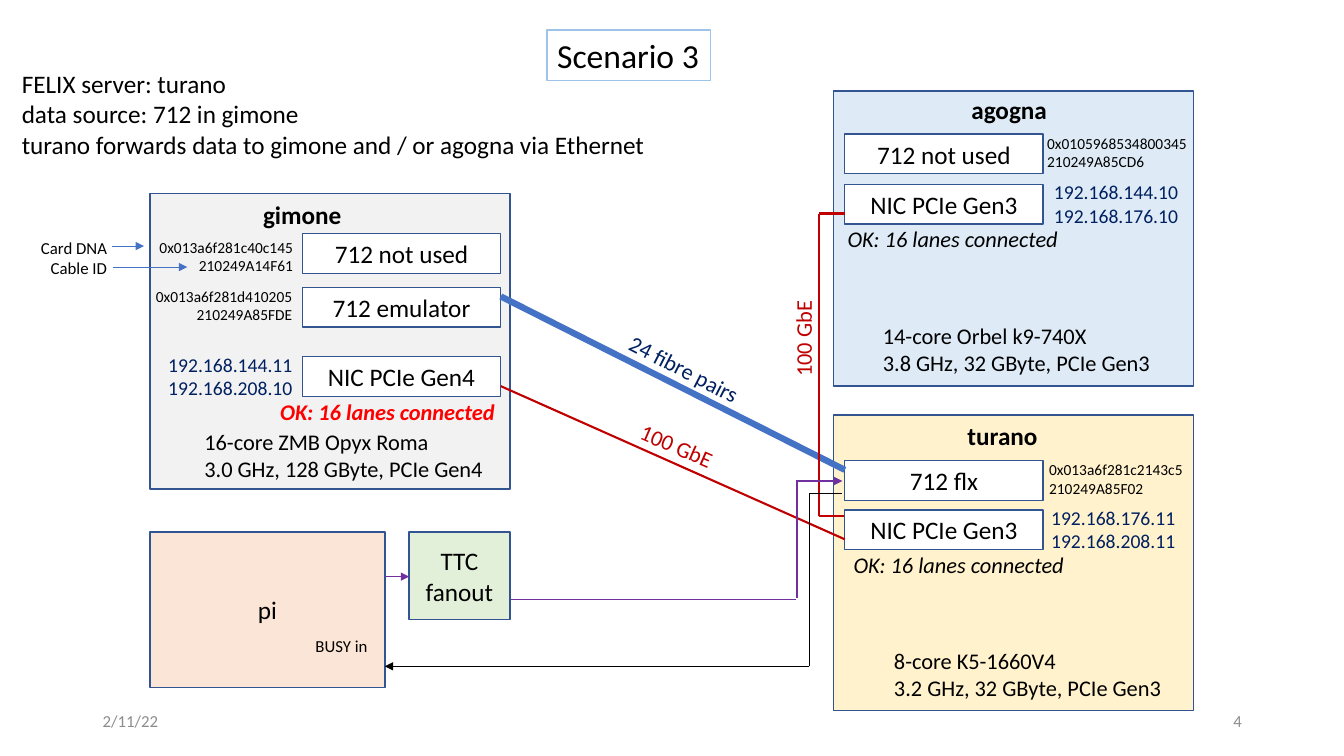
import pptx
import pptx.util
import pptx.dml.color
import pptx.enum.shapes
import pptx.enum.text
import pptx.oxml
import pptx.oxml.ns

Cm = pptx.util.Cm
Pt = pptx.util.Pt
ALIGN = pptx.enum.text.PP_ALIGN
ANCHOR = pptx.enum.text.MSO_ANCHOR
FIT = pptx.enum.text.MSO_AUTO_SIZE

THEME = {
    "font": "Calibri",
    "colours": {
        "black": "000000", "white": "FFFFFF", "outline": "325491",
        "grey": "F2F2F2", "sky": "DEEBF7", "sand": "FFF2CC",
        "peach": "FBE5D6", "mint": "E2F0D9", "title line": "9DC3E6",
        "blue": "4472C4", "red": "C00000", "purple": "7030A0",
        "navy": "002060", "alert": "FF0000", "footer": "8C8C8C",
    },
    "text": {
        "title": {"size": 24},
        "body": {"size": 18},
        "name": {"size": 18, "bold": True},
        "hardware": {"size": 16},
        "lanes": {"size": 16, "italic": True},
        "alert": {"size": 16, "colour": "alert", "bold": True, "italic": True},
        "fibre": {"size": 16, "colour": "navy"},
        "ethernet": {"size": 16, "colour": "red"},
        "address": {"size": 14, "colour": "navy"},
        "identity": {"size": 11},
        "identity right": {"size": 11, "align": ALIGN.RIGHT},
        "small": {"size": 12},
        "key": {"size": 12, "align": ALIGN.RIGHT, "wrap": True},
        "intro": {"size": 18, "wrap": True},
        "date": {"size": 12, "colour": "footer", "wrap": True, "anchor": ANCHOR.MIDDLE},
        "page": {"size": 12, "colour": "footer", "wrap": True, "anchor": ANCHOR.MIDDLE,
                 "align": ALIGN.RIGHT},
        "box": {"size": 18, "wrap": True, "anchor": ANCHOR.MIDDLE, "align": ALIGN.CENTER},
    },
}

PANEL_SIZE = (9.07, 7.44)
CARD_SIZE = (5.0, 1.0)

SERVERS = [
    {"at": (3.78, 4.88), "fill": "grey", "card_left": 7.62,
     "cards": [(5.89, "712 not used"), (7.24, "712 emulator"), (8.99, "NIC PCIe Gen4")]},
    {"at": (21.01, 2.29), "fill": "sky", "card_left": 21.29,
     "cards": [(3.38, "712 not used"), (4.65, "NIC PCIe Gen3")]},
    {"at": (21.01, 10.46), "fill": "sand", "card_left": 21.29,
     "cards": [(11.61, "712 flx"), (12.85, "NIC PCIe Gen3")]},
]

DEVICES = [
    ((3.78, 13.41, 5.92, 3.91), "peach", "pi"),
    ((10.31, 13.41, 2.54, 2.21), "mint", "TTC fanout"),
]

LINKS = [
    ("blue", 4.5, False, (12.62, 7.47), (21.29, 11.84)),
    ("red", 1.5, False, (12.62, 9.73), (21.29, 13.59)),
    ("red", 1.5, False, (21.29, 5.38), (20.65, 5.38)),
    ("red", 1.5, False, (21.26, 13.0), (20.65, 13.0)),
    ("red", 1.5, False, (20.65, 5.38), (20.65, 13.0)),
    ("purple", 1, False, (12.88, 15.11), (20.07, 15.11)),
    ("purple", 1, False, (20.09, 15.06), (20.09, 12.12)),
    ("purple", 1, True, (20.07, 12.12), (21.23, 12.12)),
    ("purple", 1, True, (9.7, 14.53), (10.31, 14.53)),
    ("black", 0.5, False, (20.4, 12.42), (21.23, 12.42)),
    ("black", 0.5, False, (20.4, 16.79), (20.4, 12.42)),
    ("black", 0.5, True, (20.4, 16.79), (9.7, 16.79)),
    ("blue", 0.5, True, (2.82, 6.2), (3.63, 6.2)),
    ("blue", 0.5, True, (2.84, 6.73), (4.72, 6.73)),
]

TITLE = ((13.79, 0.76, 4.11, 1.27), "Scenario 3")

LABELS = [
    ("intro", (0.3, 1.6, 16.74, 2.57), 0,
     ["FELIX server: turano", "data source: 712 in gimone",
      "turano forwards data to gimone and / or agogna via Ethernet"]),
    ("name", (6.38, 4.9, 2.49, 1.02), 0, ["gimone"]),
    ("name", (24.23, 2.24, 2.44, 1.02), 0, ["agogna"]),
    ("name", (24.13, 10.46, 2.29, 1.02), 0, ["turano"]),
    ("hardware", (4.9, 10.67, 7.65, 1.63), 0,
     ["16-core ZMB Opyx Roma", "3.0 GHz, 128 GByte, PCIe Gen4"]),
    ("hardware", (22.0, 8.0, 7.34, 1.63), 0,
     ["14-core Orbel k9-740X", "3.8 GHz, 32 GByte, PCIe Gen3"]),
    ("hardware", (22.28, 16.18, 7.34, 1.63), 0,
     ["8-core K5-1660V4", "3.2 GHz, 32 GByte, PCIe Gen3"]),
    ("alert", (6.81, 9.91, 6.04, 0.94), 0, ["OK: 16 lanes connected"]),
    ("lanes", (21.11, 5.54, 5.89, 0.94), 0, ["OK: 16 lanes connected"]),
    ("lanes", (21.26, 13.77, 5.89, 0.94), 0, ["OK: 16 lanes connected"]),
    ("address", (3.99, 8.76, 3.68, 1.45), 0, ["192.168.144.11", "192.168.208.10"]),
    ("address", (26.31, 4.42, 3.68, 1.45), 0, ["192.168.144.10", "192.168.176.10"]),
    ("address", (26.24, 12.62, 3.81, 1.45), 0, ["192.168.176.11", "192.168.208.11"]),
    ("identity right", (3.63, 5.87, 4.01, 1.19), 0, ["0x013a6f281c40c145", "210249A14F61"]),
    ("identity right", (3.53, 7.11, 4.09, 1.19), 0, ["0x013a6f281d410205", "210249A85FDE"]),
    ("identity", (26.14, 3.25, 4.09, 1.19), 0, ["0x0105968534800345", "210249A85CD6"]),
    ("identity", (26.19, 11.48, 3.91, 1.19), 0, ["0x013a6f281c2143c5", "210249A85F02"]),
    ("key", (0.41, 5.87, 2.54, 1.27), 0, ["Card DNA", "Cable ID"]),
    ("fibre", (15.49, 8.84, 3.53, 0.94), 27.3, ["24 fibre pairs"]),
    ("ethernet", (15.85, 10.77, 2.44, 0.94), 23.5, ["100 GbE"]),
    ("ethernet", (19.02, 8.05, 2.44, 0.94), 270, ["100 GbE"]),
    ("small", (7.7, 15.9, 1.83, 0.76), 0, ["BUSY in"]),
    ("date", (2.34, 17.65, 7.62, 1.02), 0, ["2/11/22"]),
    ("page", (23.93, 17.65, 7.62, 1.02), 0, ["4"]),
]


def colour(name):
    return pptx.dml.color.RGBColor.from_string(THEME["colours"][name])


def write(shape, lines, style_name):
    style = THEME["text"][style_name]
    frame = shape.text_frame
    frame.word_wrap = style.get("wrap", False)
    frame.auto_size = FIT.NONE if "anchor" in style else FIT.SHAPE_TO_FIT_TEXT
    frame.vertical_anchor = style.get("anchor", ANCHOR.TOP)
    frame.text = "\n".join(lines)
    for paragraph in frame.paragraphs:
        paragraph.alignment = style.get("align", ALIGN.LEFT)
        font = paragraph.font
        font.name = THEME["font"]
        font.size = Pt(style["size"])
        font.bold = style.get("bold", False)
        font.italic = style.get("italic", False)
        font.color.rgb = colour(style.get("colour", "black"))


def add_box(slide, place, fill, text=None, line="outline", style="box"):
    shape = slide.shapes.add_shape(
        pptx.enum.shapes.MSO_SHAPE.RECTANGLE, *map(Cm, place))
    shape.shadow.inherit = False
    if fill:
        shape.fill.solid()
        shape.fill.fore_color.rgb = colour(fill)
    else:
        shape.fill.background()
    shape.line.color.rgb = colour(line)
    shape.line.width = Pt(1)
    if text:
        write(shape, [text], style)


def add_link(slide, line_colour, width, arrow, start, end):
    connector = slide.shapes.add_connector(
        pptx.enum.shapes.MSO_CONNECTOR.STRAIGHT, *map(Cm, start + end))
    connector.line.color.rgb = colour(line_colour)
    connector.line.width = Pt(width)
    if arrow:
        tail = pptx.oxml.parse_xml(
            f'<a:tailEnd {pptx.oxml.ns.nsdecls("a")} type="triangle"/>')
        connector.line._get_or_add_ln().append(tail)
    connector._element.spPr.append(
        pptx.oxml.parse_xml(f'<a:effectLst {pptx.oxml.ns.nsdecls("a")}/>'))


def main():
    presentation = pptx.Presentation()
    presentation.slide_width = Cm(33.87)
    presentation.slide_height = Cm(19.05)
    slide = presentation.slides.add_slide(presentation.slide_layouts[6])

    for server in SERVERS:
        add_box(slide, server["at"] + PANEL_SIZE, server["fill"])
        for top, card in server["cards"]:
            add_box(slide, (server["card_left"], top) + CARD_SIZE, "white", card)
    for place, fill, name in DEVICES:
        add_box(slide, place, fill, name)
    for link in LINKS:
        add_link(slide, *link)
    title_place, title = TITLE
    add_box(slide, title_place, None, title, "title line", "title")
    for style, place, rotation, lines in LABELS:
        label = slide.shapes.add_textbox(*map(Cm, place))
        label.rotation = rotation
        write(label, lines, style)

    presentation.save("out.pptx")


if __name__ == "__main__":
    main()
